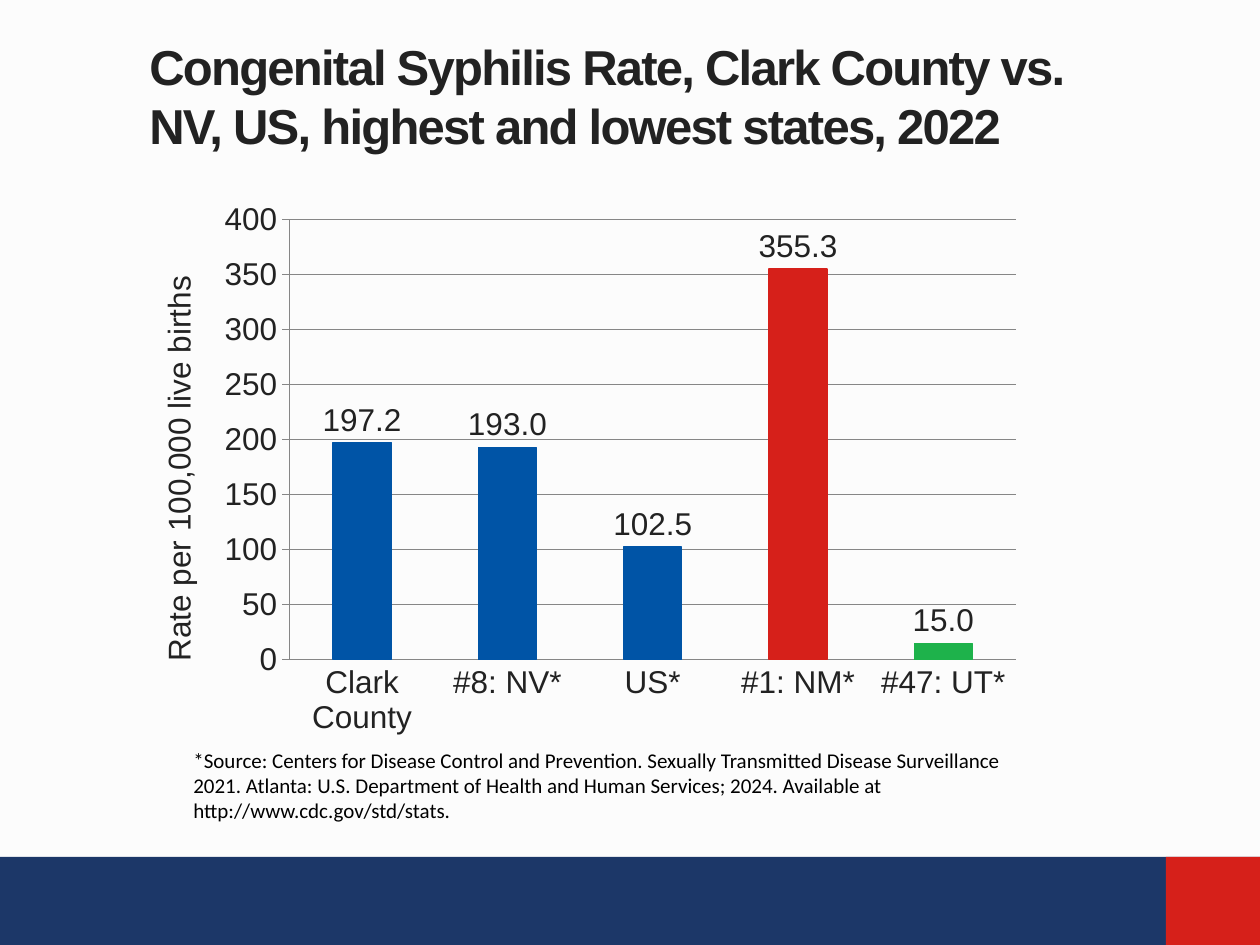
from lxml import etree
from pptx import Presentation
from pptx.chart.data import CategoryChartData
from pptx.dml.color import RGBColor
from pptx.enum.chart import XL_CHART_TYPE, XL_LABEL_POSITION, XL_TICK_MARK
from pptx.enum.shapes import MSO_SHAPE
from pptx.enum.text import MSO_ANCHOR
from pptx.oxml.ns import qn
from pptx.util import Pt

COLUMN = XL_CHART_TYPE.COLUMN_CLUSTERED
OUTSIDE_END = XL_LABEL_POSITION.OUTSIDE_END
TICK_NONE, TICK_OUT = XL_TICK_MARK.NONE, XL_TICK_MARK.OUTSIDE
RECT = MSO_SHAPE.RECTANGLE
TOP, MIDDLE = MSO_ANCHOR.TOP, MSO_ANCHOR.MIDDLE

EMU_PER_PX = 914400 // 126
WIDTH, HEIGHT = 1260, 945
COLORS = {
    "background": "FCFCFC", "navy": "1C3768", "red": "D6201A", "blue": "0054A6",
    "green": "1EB24B", "text": "222222", "black": "000000", "grid": "868686",
}
TITLE = "Congenital Syphilis Rate, Clark County vs. NV, US, highest and lowest states, 2022"
SOURCE = (
    "*Source: Centers for Disease Control and Prevention. Sexually Transmitted Disease "
    "Surveillance 2021. Atlanta: U.S. Department of Health and Human Services; 2024. "
    "Available at http://www.cdc.gov/std/stats."
)
RATES = [
    ("Clark County", 197.2, "blue"),
    ("#8: NV*", 193.0, "blue"),
    ("US*", 102.5, "blue"),
    ("#1: NM*", 355.3, "red"),
    ("#47: UT*", 15.0, "green"),
]


def px(*lengths):
    return [n * EMU_PER_PX for n in lengths]


def rgb(name):
    return RGBColor.from_string(COLORS[name])


def style_font(font, name, size, color, bold=False):
    font.name = name
    font.size = Pt(size)
    font.bold = bold
    font.color.rgb = rgb(color)


def add_band(s, box, color):
    band = s.shapes.add_shape(RECT, *px(*box))
    band.shadow.inherit = False
    band.fill.solid()
    band.fill.fore_color.rgb = rgb(color)
    band.line.fill.background()


def add_text(s, box, text, font_name, size, color, bold=False, anchor=TOP):
    tf = s.shapes.add_textbox(*px(*box)).text_frame
    tf.word_wrap = True
    tf.vertical_anchor = anchor
    tf.text = text
    p = tf.paragraphs[0]
    style_font(p.runs[0].font, font_name, size, color, bold)
    return p


def set_plot_layout(chart, **fractions):
    plot_area = chart.plots[0]._element.getparent()
    layout = plot_area.find(qn("c:layout"))
    if layout is None:
        layout = etree.Element(qn("c:layout"))
        plot_area.insert(0, layout)
    manual = etree.SubElement(layout, qn("c:manualLayout"))
    settings = {"layoutTarget": "inner", "xMode": "edge", "yMode": "edge", **fractions}
    for tag, value in settings.items():
        etree.SubElement(manual, qn(f"c:{tag}")).set("val", str(value))


def style_line(line, color):
    line.color.rgb = rgb(color)
    line.width = Pt(0.75)


def style_axes(chart):
    category, value = chart.category_axis, chart.value_axis
    category.major_tick_mark = TICK_NONE
    value.major_tick_mark = TICK_OUT
    value.minimum_scale, value.maximum_scale, value.major_unit = 0, 400, 50
    value.tick_labels.number_format = "0"
    value.tick_labels.number_format_is_linked = False
    value.has_major_gridlines = True
    for line in (category.format.line, value.format.line, value.major_gridlines.format.line):
        style_line(line, "grid")
    tf = value.axis_title.text_frame
    tf.text = "Rate per 100,000 live births"
    style_font(tf.paragraphs[0].runs[0].font, "Arial", 18, "text")


def add_rate_chart(s, box):
    names, values, colors = zip(*RATES)
    data = CategoryChartData(number_format="0.0")
    data.categories = names
    data.add_series("Series 1", values)
    chart = s.shapes.add_chart(COLUMN, *px(*box), data).chart
    chart.has_legend = False
    chart.has_title = False
    style_font(chart.font, "Arial", 18, "text")
    style_axes(chart)
    set_plot_layout(chart, x=0.17, y=0.05, w=0.81, h=0.79)

    plot = chart.plots[0]
    plot.gap_width = 150
    plot.vary_by_categories = False
    series = plot.series[0]
    series.invert_if_negative = False
    for i, color in enumerate(colors):
        bar = series.points[i].format
        bar.fill.solid()
        bar.fill.fore_color.rgb = rgb(color)
        style_line(bar.line, color)
    labels = series.data_labels
    labels.show_value = True
    labels.position = OUTSIDE_END
    labels.number_format = "0.0"
    labels.number_format_is_linked = False
    style_font(labels.font, "Arial", 18, "text")


def main():
    prs = Presentation()
    prs.slide_width, prs.slide_height = px(WIDTH, HEIGHT)
    s = prs.slides.add_slide(prs.slide_layouts[6])
    s.background.fill.solid()
    s.background.fill.fore_color.rgb = rgb("background")

    add_band(s, (0, 857, WIDTH, 88), "navy")
    add_band(s, (1166, 857, 94, 88), "red")
    title = add_text(s, (137, 34, 956, 122), TITLE, "Arial", 28, "text", True, MIDDLE)
    title.runs[0].font._element.set("spc", "-100")
    add_rate_chart(s, (137, 192, 897, 557))
    add_text(s, (181, 741, 833, 108), SOURCE, "Calibri", 12, "black")
    prs.save("out.pptx")


if __name__ == "__main__":
    main()
